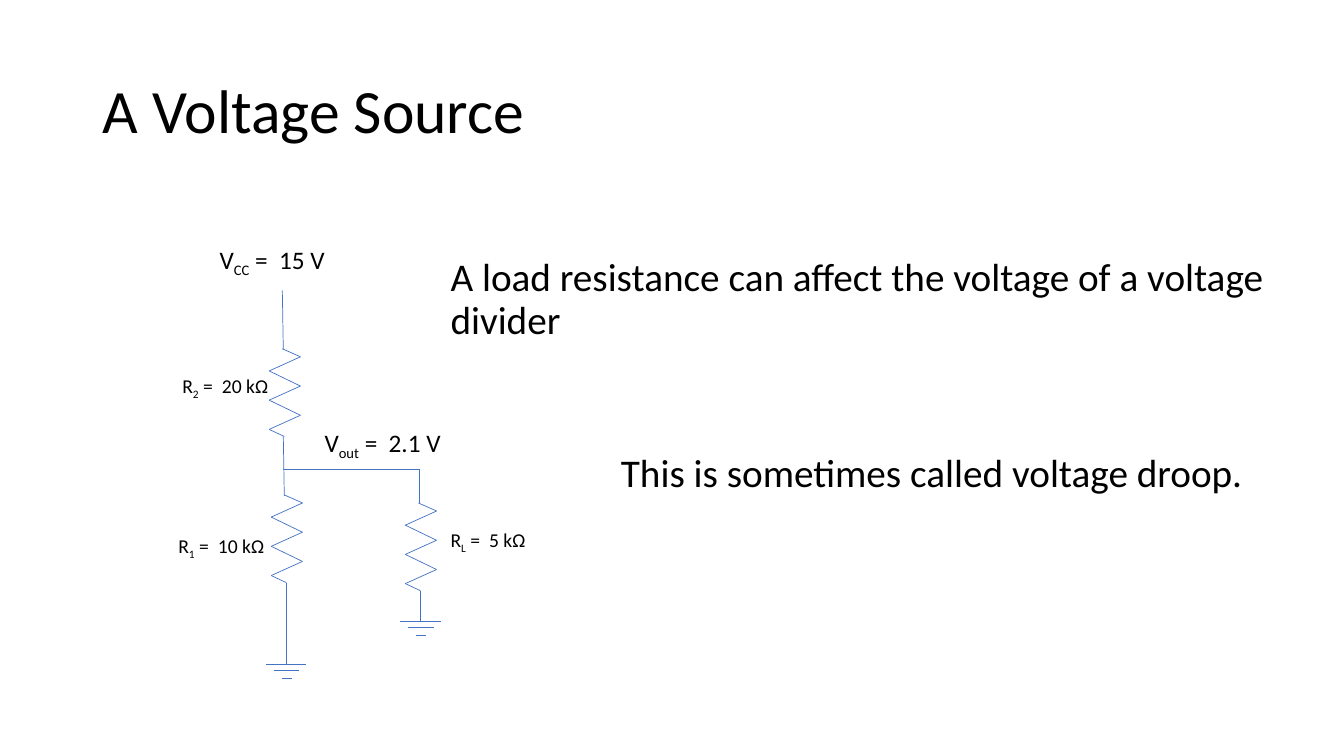
from itertools import pairwise

from lxml import etree
from pptx import Presentation
from pptx import util as u
from pptx.dml.color import RGBColor
from pptx.enum import shapes, text
from pptx.oxml import ns

COLOURS = {"ink": "000000", "wire": "4472C4"}

# Offsets from the upper end of a resistor
ZIGZAG = [(0, 0), (0.18, 0.08), (-0.13, 0.22), (0.18, 0.37),
          (-0.13, 0.51), (0.18, 0.66), (-0.13, 0.8), (0.02, 0.87)]
# Left end, right end and drop of each ground bar
GROUND_BARS = [(-0.2, 0.2, 0), (-0.12, 0.13, 0.06), (-0.04, 0.06, 0.14)]


class CircuitSlide:
    """Holds the style and the slide being drawn."""

    font = "Calibri"
    wire_width = u.Pt(0.5)

    def __init__(self, deck):
        self.page = deck.slides.add_slide(deck.slide_layouts[5])

    def place(self, box, left, top, width, height):
        frame = {"left": left, "top": top, "width": width, "height": height}
        for name, value in frame.items():
            setattr(box, name, u.Inches(value))

    def add_span(self, para, words, size, subscript=False):
        span = para.add_run()
        span.text = words
        for name, value in {"size": u.Pt(size), "name": self.font}.items():
            setattr(span.font, name, value)
        span.font.color.rgb = RGBColor.from_string(COLOURS["ink"])
        if subscript:
            span._r.get_or_add_rPr().set("baseline", "-25000")

    def title(self, words, *area):
        box = self.page.shapes.title
        self.place(box, *area)
        box.text_frame.vertical_anchor = text.MSO_ANCHOR.MIDDLE
        para = box.text_frame.paragraphs[0]
        para.alignment = text.PP_ALIGN.LEFT
        para.line_spacing = 0.9
        self.add_span(para, words, 44)

    def text_box(self, parent, left, top, width, height):
        box = parent.shapes.add_textbox(*map(u.Inches, (left, top, width, height)))
        box.text_frame.word_wrap = True
        return box.text_frame

    def statement(self, words, *area):
        para = self.text_box(self.page, *area).paragraphs[0]
        for name, value in {"line_spacing": 0.9, "space_before": u.Pt(10)}.items():
            setattr(para, name, value)
        self.add_span(para, words, 28)

    def label(self, parent, symbol, index, value, left, top, size=14):
        width, height = (1.79, 0.4) if size == 18 else (1.38, 0.34)
        frame = self.text_box(parent, left, top, width, height)
        frame.auto_size = text.MSO_AUTO_SIZE.SHAPE_TO_FIT_TEXT
        para = frame.paragraphs[0]
        self.add_span(para, symbol, size)
        self.add_span(para, index, size, subscript=True)
        self.add_span(para, f" =  {value}", size)

    def group(self):
        return self.page.shapes.add_group_shape()

    def wire(self, parent, start, end):
        line = parent.shapes.add_connector(
            shapes.MSO_CONNECTOR.STRAIGHT, *map(u.Inches, (*start, *end)))
        line.line.width = self.wire_width
        line.line.color.rgb = RGBColor.from_string(COLOURS["wire"])
        etree.SubElement(line._element.spPr, ns.qn("a:effectLst"))

    def resistor(self, parent, x, y):
        corners = [(x + dx, y + dy) for dx, dy in ZIGZAG]
        for start, end in pairwise(corners):
            self.wire(parent, start, end)

    def ground(self, parent, x, y):
        for left, right, drop in GROUND_BARS:
            self.wire(parent, (x + left, y + drop), (x + right, y + drop))


def main():
    deck = Presentation()
    deck.slide_width, deck.slide_height = u.Inches(13.33), u.Inches(7.5)
    slide = CircuitSlide(deck)
    slide.title("A Voltage Source", 0.92, 0.4, 11.5, 1.45)

    # Divider: supply, R2, R1, ground
    divider = slide.group()
    slide.wire(divider, (2.8, 2.88), (2.81, 3.47))
    slide.resistor(divider, 2.8, 3.46)
    slide.wire(divider, (2.81, 4.33), (2.82, 4.92))
    slide.resistor(divider, 2.82, 4.91)
    slide.wire(divider, (2.84, 5.78), (2.84, 6.59))
    slide.ground(divider, 2.84, 6.59)
    slide.label(divider, "V", "CC", "15 V", 2.08, 2.37, size=18)
    slide.label(slide.page, "R", "1", "10 kΩ", 1.67, 5.25)
    slide.label(slide.page, "R", "2", "20 kΩ", 1.71, 3.66)

    # Load branch: output node, RL, ground
    load = slide.group()
    slide.wire(load, (2.81, 4.66), (4.17, 4.66))
    slide.wire(load, (4.16, 4.66), (4.16, 4.99))
    slide.resistor(load, 4.15, 4.99)
    slide.wire(load, (4.17, 5.86), (4.17, 6.16))
    slide.ground(load, 4.17, 6.16)
    slide.label(load, "R", "L", "5 kΩ", 4.37, 5.19)
    slide.label(slide.page, "V", "out", "2.1 V", 3.12, 4.19, size=18)

    # Statements
    slide.statement("A load resistance can affect the voltage of a voltage divider",
                    4.37, 2.51, 8.89, 1.07)
    slide.statement("This is sometimes called voltage droop.", 6.06, 4.45, 6.48, 0.59)

    deck.save("out.pptx")


if __name__ == "__main__":
    main()
